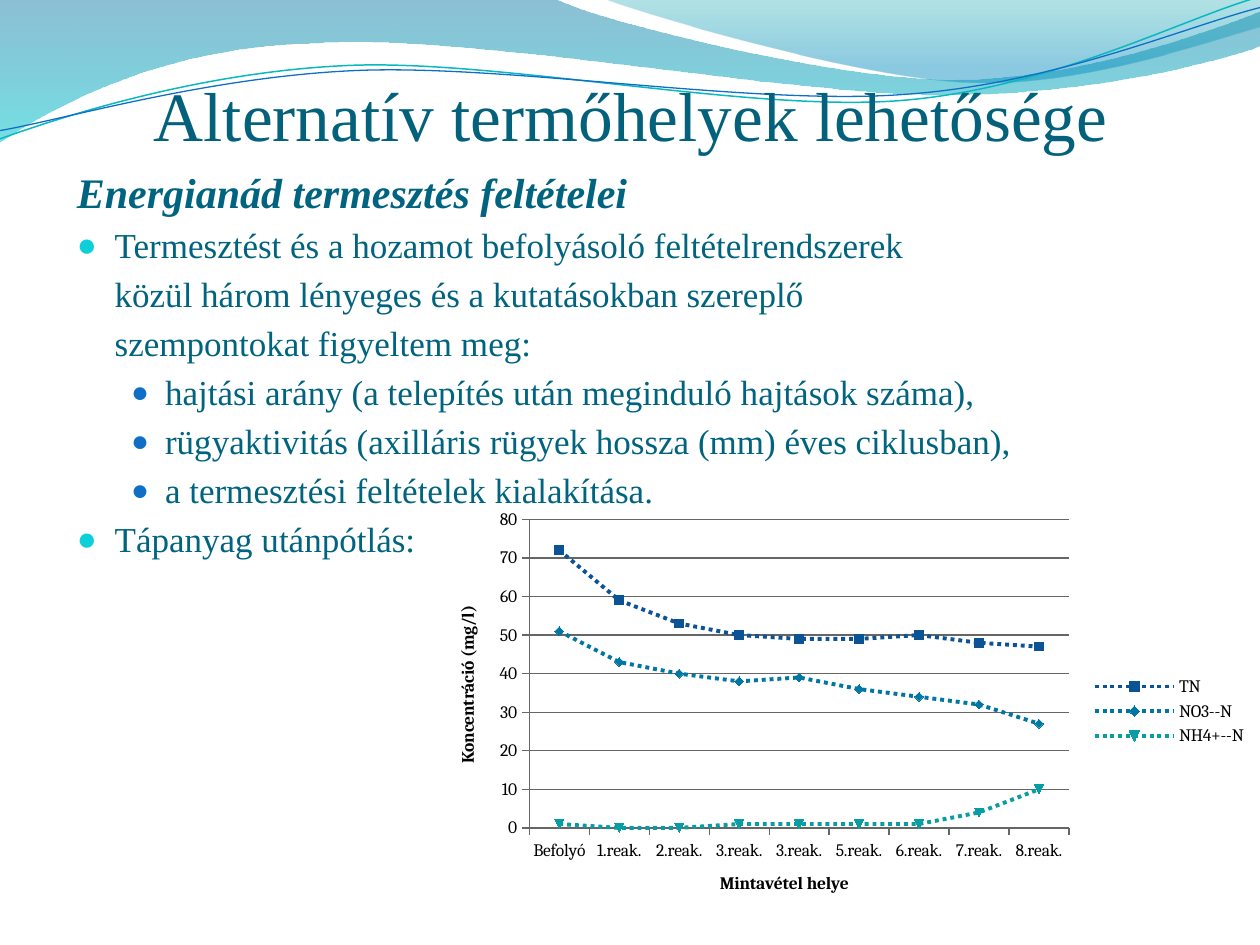
from lxml import etree
from pptx import Presentation
from pptx.chart.data import CategoryChartData
from pptx.dml.color import RGBColor
from pptx.enum.chart import XL_CHART_TYPE, XL_LEGEND_POSITION, XL_MARKER_STYLE, XL_TICK_MARK
from pptx.enum.dml import MSO_LINE
from pptx.enum.text import MSO_ANCHOR, MSO_AUTO_SIZE, PP_ALIGN
from pptx.oxml.ns import qn
from pptx.util import Inches, Pt

LINES = XL_CHART_TYPE.LINE_MARKERS
RIGHT = XL_LEGEND_POSITION.RIGHT
AUTO = XL_MARKER_STYLE.AUTOMATIC
OUTER = XL_TICK_MARK.OUTSIDE
DOTS = MSO_LINE.ROUND_DOT
BOTTOM, TOP = MSO_ANCHOR.BOTTOM, MSO_ANCHOR.TOP
FIXED = MSO_AUTO_SIZE.NONE
LEFT = PP_ALIGN.LEFT

WAVE = [(0, 0), (4.4, -0.01), (4.76, 0.17, 6.64, 0.63, 7.58, 0.63),
        (8.53, 0.63, 9.58, 0.26, 10, 0.09), (10.01, 0.36),
        (9.83, 0.44, 8.7, 0.76, 7.46, 0.75), (6.22, 0.75, 3.82, 0.28, 2.57, 0.34),
        (1.29, 0.36, 0.46, 0.83, -0.01, 1.13), (0, 0)]
CREST = [(4.79, -0.01), (5.09, 0.11, 6.82, 0.62, 7.69, 0.65),
         (8.56, 0.69, 9.61, 0.32, 10, 0.21), (10, 0), (4.79, -0.01)]
TEAL = [(-0.02, 1.11), (0.48, 0.93, 1.58, 0.57, 2.77, 0.52),
        (3.95, 0.47, 5.93, 0.89, 7.13, 0.8), (8.33, 0.71, 9.38, 0.15, 9.98, -0.02)]
BLUE = [(-0.02, 1.04), (0.47, 0.96, 1.64, 0.61, 2.83, 0.56),
        (4.03, 0.51, 5.97, 0.84, 7.17, 0.75), (8.36, 0.67, 9.41, 0.21, 10, 0.06)]

HEAD, MAIN, MORE, SUB = "head", "main", "more", "sub"
BODY = [
    (HEAD, "Energianád termesztés feltételei"),
    (MAIN, "Termesztést és a hozamot befolyásoló feltételrendszerek"),
    (MORE, "közül három lényeges és a kutatásokban szereplő"),
    (MORE, "szempontokat figyeltem meg:"),
    (SUB, "hajtási arány (a telepítés után meginduló hajtások száma),"),
    (SUB, "rügyaktivitás (axilláris rügyek hossza (mm) éves ciklusban),"),
    (SUB, "a termesztési feltételek kialakítása."),
    (MAIN, "Tápanyag utánpótlás:"),
]
INDENTS = {HEAD: (0.3, -0.3), MAIN: (0.3, -0.3), MORE: (0.3, 0), SUB: (0.7, -0.27)}
BULLETS = {MAIN: ("0BD0D9", 95), SUB: ("0F6FC6", 85)}

CATS = ["Befolyó", "1.reak.", "2.reak.", "3.reak.", "3.reak.",
        "5.reak.", "6.reak.", "7.reak.", "8.reak."]
SERIES = [
    ("TN", "0B5394", [72, 59, 53, 50, 49, 49, 50, 48, 47]),
    ("NO3--N", "0076A3", [51, 43, 40, 38, 39, 36, 34, 32, 27]),
    ("NH4+--N", "089CA3", [1, 0, 0, 1, 1, 1, 1, 4, 10]),
]


def rgb(code):
    """Turn a hex string into a colour."""
    return RGBColor.from_string(code)


def node(root, tag, **attrs):
    """Append an XML child and return it."""
    return etree.SubElement(root, qn(tag), {k: str(v) for k, v in attrs.items()})


class Deck:
    """Hold the style and the current slide."""

    def __init__(self):
        """Start a slide with a title and a body."""
        self.font, self.small = "Times New Roman", "Cambria"
        self.prs = Presentation()
        self.prs.slide_width, self.prs.slide_height = Inches(10), Inches(7.5)
        self.slide = self.prs.slides.add_slide(self.prs.slide_layouts[1])
        self.shapes = self.slide.shapes

    def free(self, steps, closed):
        """Draw a freeform of lines and cubic curves."""
        ends = [(Inches(step[-2]), Inches(step[-1])) for step in steps]
        pen = self.shapes.build_freeform(*ends[0])
        pen.add_line_segments(ends[1:], close=closed)
        shape = pen.convert_to_shape()
        shape.shadow.inherit = False
        legs = list(shape.element.iter(qn("a:lnTo")))
        for leg, step in zip(legs, steps[1:]):
            if len(step) == 6:
                bend = etree.Element(qn("a:cubicBezTo"))
                for x, y in zip(step[::2], step[1::2]):
                    node(bend, "a:pt", x=Inches(x) - shape.left, y=Inches(y) - shape.top)
                leg.getparent().replace(leg, bend)
        return shape

    def band(self, steps, stops):
        """Draw a closed band with a see-through gradient."""
        shape = self.free(steps, True)
        shape.line.fill.background()
        shape.fill.gradient()
        shape.fill.gradient_angle = 270
        for stop, (spot, code, _) in zip(shape.fill.gradient_stops, stops):
            stop.position = spot
            stop.color.rgb = rgb(code)
        tags = shape.element.iter(qn("a:srgbClr"))
        for tag, (_, _, alpha) in zip(tags, stops):
            node(tag, "a:alpha", val=alpha * 1000)

    def curve(self, steps, code, width):
        """Draw an open curve."""
        shape = self.free(steps, False)
        shape.fill.background()
        shape.line.color.rgb = rgb(code)
        shape.line.width = Pt(width)

    def holder(self, index, box, anchor):
        """Place a template placeholder in front."""
        shape = self.slide.placeholders[index]
        shape.left, shape.top, shape.width, shape.height = map(Inches, box)
        self.shapes.element.append(shape.element)
        frame = shape.text_frame
        frame.auto_size, frame.vertical_anchor = FIXED, anchor
        return frame

    def style(self, para, size, code, bold=False):
        """Format the runs of a paragraph."""
        para.alignment = LEFT
        for run in para.runs:
            font = run.font
            font.name, font.size, font.color.rgb = self.font, Pt(size), rgb(code)
            font.bold = font.italic = bold

    def title(self, text, box):
        """Fill the title."""
        frame = self.holder(0, box, BOTTOM)
        frame.margin_left = frame.margin_right = frame.margin_bottom = 0
        frame.text = text
        self.style(frame.paragraphs[0], 39.6, "04617B")

    def body(self, items, box):
        """Fill the body list."""
        frame = self.holder(1, box, TOP)
        frame.text = "\n".join(text for _, text in items)
        for para, (kind, _) in zip(frame.paragraphs, items):
            head = kind == HEAD
            self.style(para, 24 if head else 20, "00637F", head)
            para.level = int(kind == SUB)
            para.space_before = Pt(5 if head else 4)
            props = para._p.get_or_add_pPr()
            left, first = INDENTS[kind]
            props.set("marL", str(Inches(left)))
            props.set("indent", str(Inches(first)))
            if kind in BULLETS:
                code, size = BULLETS[kind]
                node(node(props, "a:buClr"), "a:srgbClr", val=code)
                node(props, "a:buSzPct", val=size * 1000)
                node(props, "a:buChar", char="●")
            else:
                node(props, "a:buNone")

    def axis(self, axis, text):
        """Style a chart axis and its title."""
        axis.major_tick_mark = OUTER
        axis.format.line.color.rgb = rgb("666666")
        frame = axis.axis_title.text_frame
        frame.text = text
        font = frame.paragraphs[0].runs[0].font
        font.name, font.size, font.bold = self.small, Pt(10), True

    def chart(self, cats, series, box):
        """Add the line chart."""
        data = CategoryChartData(number_format="0")
        data.categories = cats
        for name, _, vals in series:
            data.add_series(name, vals)
        chart = self.shapes.add_chart(LINES, *map(Inches, box), data).chart
        chart.has_title = False
        font = chart.font
        font.name, font.size, font.color.rgb = self.small, Pt(10), rgb("000000")
        chart.has_legend = True
        chart.legend.position, chart.legend.include_in_layout = RIGHT, False
        self.axis(chart.category_axis, "Mintavétel helye")
        scale = chart.value_axis
        self.axis(scale, "Koncentráció (mg/l)")
        scale.minimum_scale, scale.maximum_scale, scale.major_unit = 0, 80, 10
        scale.major_gridlines.format.line.color.rgb = rgb("666666")
        plot = chart.plots[0]
        plot.vary_by_categories = False
        for line, (_, code, _) in zip(plot.series, series):
            line.smooth = False
            pen = line.format.line
            pen.color.rgb, pen.width, pen.dash_style = rgb(code), Pt(2.25), DOTS
            mark = line.marker
            mark.style, mark.size = AUTO, 5
            mark.format.fill.solid()
            mark.format.fill.fore_color.rgb = rgb(code)
            mark.format.line.color.rgb = rgb(code)
        area = chart.element.find(".//" + qn("c:plotArea"))
        for old in area.findall(qn("c:layout")):
            area.remove(old)
        lay = etree.Element(qn("c:layout"))
        area.insert(0, lay)
        hand = node(lay, "c:manualLayout")
        for tag, val in (("layoutTarget", "inner"), ("xMode", "edge"), ("yMode", "edge"),
                         ("x", 0.12), ("y", 0.04), ("w", 0.65), ("h", 0.74)):
            node(hand, "c:" + tag, val=val)


def main():
    """Build and save the slide."""
    deck = Deck()
    deck.band(WAVE, [(0, "0074A1", 45), (1, "00C6CF", 55)])
    deck.band(CREST, [(0, "00A1A9", 30), (0.8, "008BBF", 45)])
    deck.curve(TEAL, "0AB8BF", 0.85)
    deck.curve(BLUE, "0F6FC6", 0.75)
    deck.title("Alternatív termőhelyek lehetősége", (1.22, 0.22, 8.2, 1.01))
    deck.body(BODY, (0.51, 1.27, 9.84, 5.47))
    deck.chart(CATS, SERIES, (3.41, 3.99, 6.59, 3.31))
    deck.prs.save("out.pptx")


if __name__ == "__main__":
    main()
